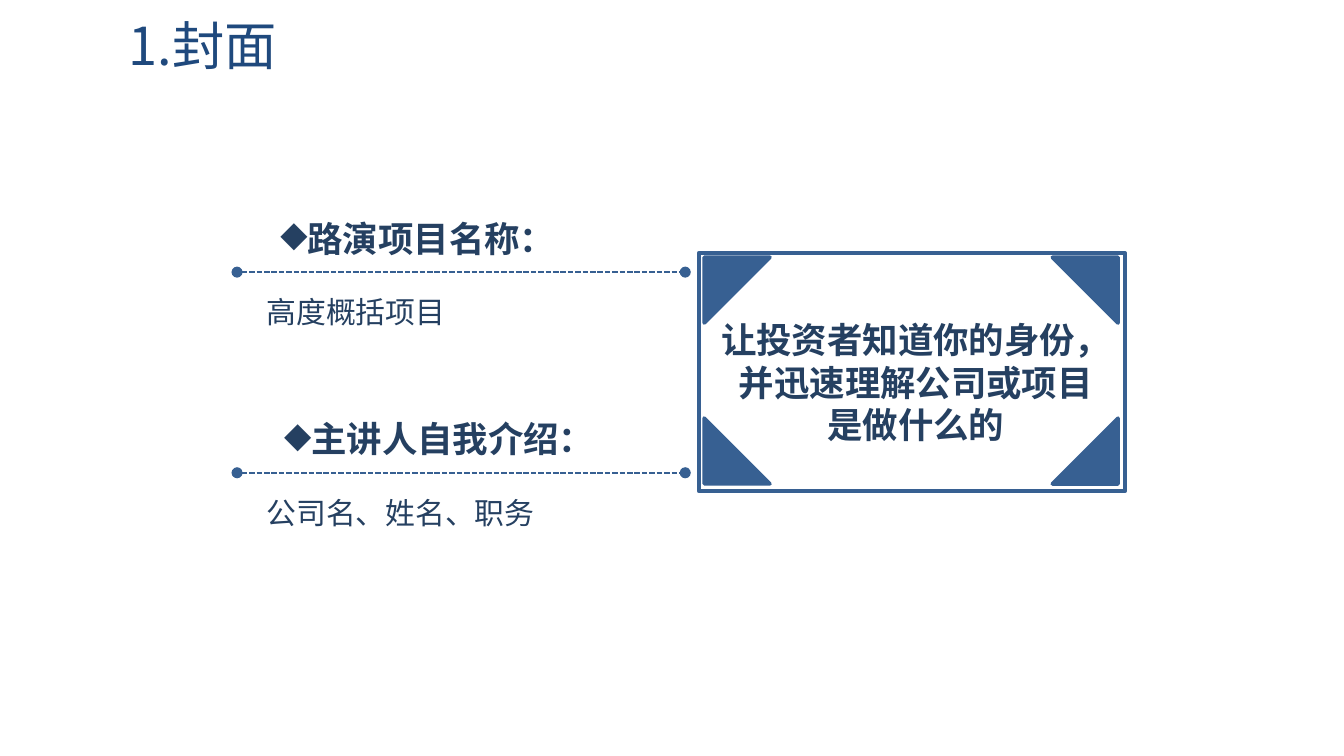
from pptx import Presentation
from pptx.dml.color import RGBColor
from pptx.enum.dml import MSO_LINE_DASH_STYLE as Dash
from pptx.enum.shapes import MSO_CONNECTOR as Connector, MSO_SHAPE as Shape
from pptx.enum.text import MSO_ANCHOR as Anchor, PP_ALIGN as Align
from pptx.oxml.ns import qn
from pptx.util import Cm, Pt
from lxml.etree import SubElement

TITLE_BLUE = RGBColor(0x1F, 0x49, 0x7D)
TEXT_BLUE = RGBColor(0x25, 0x40, 0x61)
LINE_BLUE = RGBColor(0x37, 0x60, 0x92)

TITLE = dict(size=Pt(28), name="Noto Sans CJK JP", color=TITLE_BLUE)
HEADING = dict(size=Pt(19), name="Arial", color=TEXT_BLUE, bold=True)
BODY = dict(size=Pt(16), name="Arial", color=TEXT_BLUE)
MESSAGE = dict(size=Pt(19), name="Noto Sans CJK SC", color=TEXT_BLUE, bold=True)

# heading, detail, left and top of the heading
SECTIONS = [
    ("路演项目名称：", "高度概括项目", 4.55, 3.73),
    ("主讲人自我介绍：", "公司名、姓名、职务", 4.62, 7.52),
]
MESSAGE_LINES = ["让投资者知道你的身份，", "并迅速理解公司或项目", "是做什么的"]


def set_indent(p, indent, bullet=None):
    """Indent the first line and give it an optional bullet character."""
    pPr = p._p.get_or_add_pPr()
    pPr.set("marL", "0")
    pPr.set("indent", str(Cm(indent)))
    if bullet:
        SubElement(pPr, qn("a:buChar")).set("char", bullet)


def add_run(p, text, style):
    r = p.add_run()
    r.text = text
    for key, value in style.items():
        if key == "color":
            r.font.color.rgb = value
        else:
            setattr(r.font, key, value)
    SubElement(r.font._element, qn("a:ea")).set("typeface", style["name"])


def add_text(slide, box, lines, style, align=Align.LEFT, anchor=Anchor.TOP,
             spacing=None, indent=0, bullet=None):
    tf = slide.shapes.add_textbox(*map(Cm, box)).text_frame
    tf.word_wrap = True
    tf.vertical_anchor = anchor
    for i, line in enumerate(lines):
        p = tf.add_paragraph() if i else tf.paragraphs[0]
        p.alignment = align
        if spacing:
            p.line_spacing = spacing
        set_indent(p, indent, bullet)
        add_run(p, line, style)


def add_dotted_rule(slide, left, right, y):
    """Dashed line with a round dot at each end."""
    s = slide.shapes.add_connector(Connector.STRAIGHT, Cm(left), Cm(y), Cm(right), Cm(y))
    s.line.color.rgb = LINE_BLUE
    s.line.width = Pt(1)
    s.line.dash_style = Dash.SQUARE_DOT
    ln = s.line._get_or_add_ln()
    for end in ("a:headEnd", "a:tailEnd"):
        SubElement(ln, qn(end)).set("type", "oval")
    SubElement(s._element.spPr, qn("a:effectLst"))


def add_section(slide, heading, detail, left, top):
    layout = dict(align=Align.JUSTIFY, spacing=1.3, indent=0.5)
    add_text(slide, (left, top, 9.93, 1.32), [heading], HEADING, bullet="◆", **layout)
    add_dotted_rule(slide, 4.48, 12.95, top + 1.41)
    add_text(slide, (4.29, top + 1.49, 8.9, 1.14), [detail], BODY, **layout)


def add_shape(slide, kind, box, line_width, fill=None, rotation=0):
    s = slide.shapes.add_shape(kind, *map(Cm, box))
    s.shadow.inherit = False
    s.rotation = rotation
    s.line.color.rgb = LINE_BLUE
    s.line.width = Pt(line_width)
    if fill is None:
        s.fill.background()
    else:
        s.fill.solid()
        s.fill.fore_color.rgb = fill


def add_frame(slide):
    """Outlined box with a filled triangle in each corner."""
    add_shape(slide, Shape.FLOWCHART_PROCESS, (13.21, 4.78, 8.05, 4.5), 2.25)
    left, right, top, bottom, side = 13.31, 19.89, 4.86, 7.9, 1.24
    corners = [(left, bottom), (left, top), (right, top), (right, bottom)]
    for i, (x, y) in enumerate(corners):
        add_shape(slide, Shape.RIGHT_TRIANGLE, (x, y, side, side), 2, LINE_BLUE, 90 * i)


def main():
    prs = Presentation()
    prs.slide_width, prs.slide_height = Cm(25.4), Cm(14.28)
    slide = prs.slides.add_slide(prs.slide_layouts[6])
    add_text(slide, (2.18, 0.05, 9.37, 1.6), ["1.封面"], TITLE, anchor=Anchor.MIDDLE)
    for section in SECTIONS:
        add_section(slide, *section)
    add_text(slide, (13.31, 5.89, 8, 2.69), MESSAGE_LINES, MESSAGE, align=Align.CENTER)
    add_frame(slide)
    prs.save("out.pptx")


if __name__ == "__main__":
    main()
